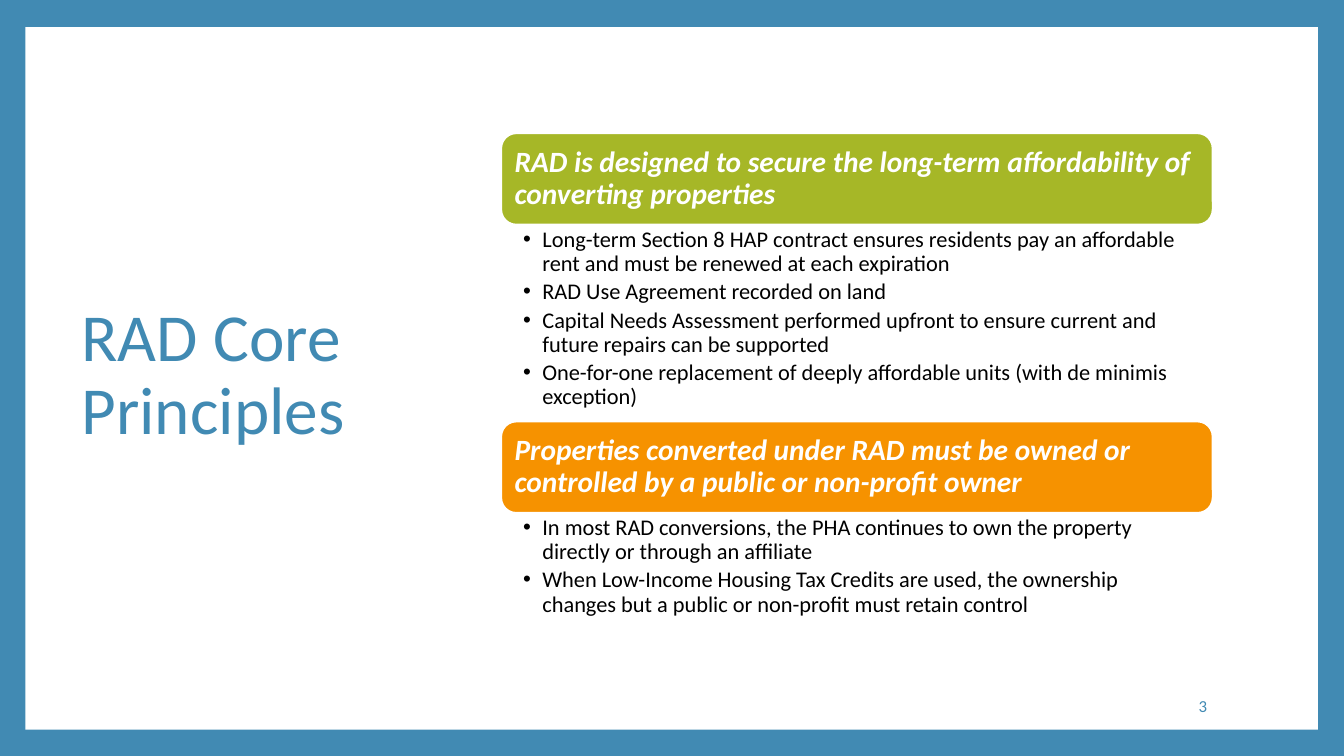
from lxml.etree import SubElement
from pptx import Presentation
from pptx.dml.color import RGBColor
from pptx.enum.shapes import MSO_SHAPE as Shape
from pptx.enum.text import MSO_ANCHOR as Anchor, PP_ALIGN as Align
from pptx.oxml.ns import qn
from pptx.util import Inches, Pt

BLUE = RGBColor(0x41, 0x8A, 0xB3)
GREEN = RGBColor(0xA6, 0xB7, 0x27)
ORANGE = RGBColor(0xF6, 0x92, 0x00)
WHITE = RGBColor(0xFF, 0xFF, 0xFF)
BLACK = RGBColor(0x00, 0x00, 0x00)

FONT = "Calibri"
PAGE_WIDTH, PAGE_HEIGHT = Inches(13.33), Inches(7.5)

# Places are percentages of the page's width and height.
COLUMN_LEFT, COLUMN_WIDTH = 37.28, 52.96
COLUMN_TOP, BANNER_HEIGHT = 17.6, 12.13

# Each principle: banner colour, heading, height of its list, points.
PRINCIPLES = [
    (GREEN,
     "RAD is designed to secure the long-term affordability of converting properties",
     26,
     ["Long-term Section 8 HAP contract ensures residents pay an affordable rent "
      "and must be renewed at each expiration",
      "RAD Use Agreement recorded on land",
      "Capital Needs Assessment performed upfront to ensure current and future "
      "repairs can be supported",
      "One-for-one replacement of deeply affordable units (with de minimis exception)"]),
    (ORANGE,
     "Properties converted under RAD must be owned or controlled by a public or "
     "non-profit owner",
     14.53,
     ["In most RAD conversions, the PHA continues to own the property directly or "
      "through an affiliate",
      "When Low-Income Housing Tax Credits are used, the ownership changes but a "
      "public or non-profit must retain control"]),
]


def place(left, top, width, height):
    """Turn percentages of the page into lengths."""
    return (int(PAGE_WIDTH * left / 100), int(PAGE_HEIGHT * top / 100),
            int(PAGE_WIDTH * width / 100), int(PAGE_HEIGHT * height / 100))


def add_panel(page, kind, area, fill):
    panel = page.shapes.add_shape(kind, *place(*area))
    panel.shadow.inherit = False
    panel.fill.solid()
    panel.fill.fore_color.rgb = fill
    panel.line.fill.background()
    return panel


def set_frame(box, anchor, left=0.1, top=0.05, right=0.1, bottom=0.05):
    """Set wrapping, anchor and insets in inches, and return the text frame."""
    frame = box.text_frame
    frame.word_wrap = True
    frame.vertical_anchor = anchor
    frame.margin_left, frame.margin_right = Inches(left), Inches(right)
    frame.margin_top, frame.margin_bottom = Inches(top), Inches(bottom)
    return frame


def write(para, text, size, color, align=Align.LEFT, strong=False):
    para.alignment = align
    para.line_spacing = 0.9
    run = para.add_run()
    run.text = text
    run.font.name = FONT
    run.font.size = Pt(size)
    run.font.color.rgb = color
    run.font.bold = run.font.italic = strong


def add_label(page, area, text, size, align=Align.LEFT):
    box = page.shapes.add_textbox(*place(*area))
    frame = set_frame(box, Anchor.MIDDLE)
    write(frame.paragraphs[0], text, size, BLUE, align)


def add_banner(page, top, color, heading):
    area = COLUMN_LEFT, top, COLUMN_WIDTH, BANNER_HEIGHT
    banner = add_panel(page, Shape.ROUNDED_RECTANGLE, area, color)
    banner.line.color.rgb = WHITE
    banner.line.width = Pt(1.5)
    frame = set_frame(banner, Anchor.MIDDLE, 0.09, 0.09, 0.09, 0.09)
    write(frame.paragraphs[0], heading, 21, WHITE, strong=True)


def add_bullet(para):
    properties = para._p.get_or_add_pPr()
    indent = Inches(0.19)
    properties.set("marL", str(indent))
    properties.set("indent", str(-indent))
    SubElement(properties, qn("a:buFont"), typeface="Arial")
    SubElement(properties, qn("a:buChar"), char="•")


def add_points(page, top, height, points):
    box = page.shapes.add_textbox(*place(COLUMN_LEFT, top, COLUMN_WIDTH, height))
    frame = set_frame(box, Anchor.TOP, 0.22, 0.03, 0.16, 0.03)
    for index, point in enumerate(points):
        para = frame.add_paragraph() if index else frame.paragraphs[0]
        write(para, point, 16, BLACK)
        para.space_after = Pt(3)
        add_bullet(para)


def main():
    deck = Presentation()
    deck.slide_width, deck.slide_height = PAGE_WIDTH, PAGE_HEIGHT
    page = deck.slides.add_slide(deck.slide_layouts[6])
    page.background.fill.solid()
    page.background.fill.fore_color.rgb = BLUE

    add_panel(page, Shape.RECTANGLE, (1.88, 3.6, 96.17, 92.93), WHITE)
    add_label(page, (5.33, 8.93, 27.61, 81.73), "RAD Core Principles", 48)
    add_label(page, (76.52, 90.8, 14.03, 5.33), "3", 12, Align.RIGHT)

    top = COLUMN_TOP
    for color, heading, list_height, points in PRINCIPLES:
        add_banner(page, top, color, heading)
        top += BANNER_HEIGHT
        add_points(page, top, list_height, points)
        top += list_height

    deck.save("out.pptx")


if __name__ == "__main__":
    main()
